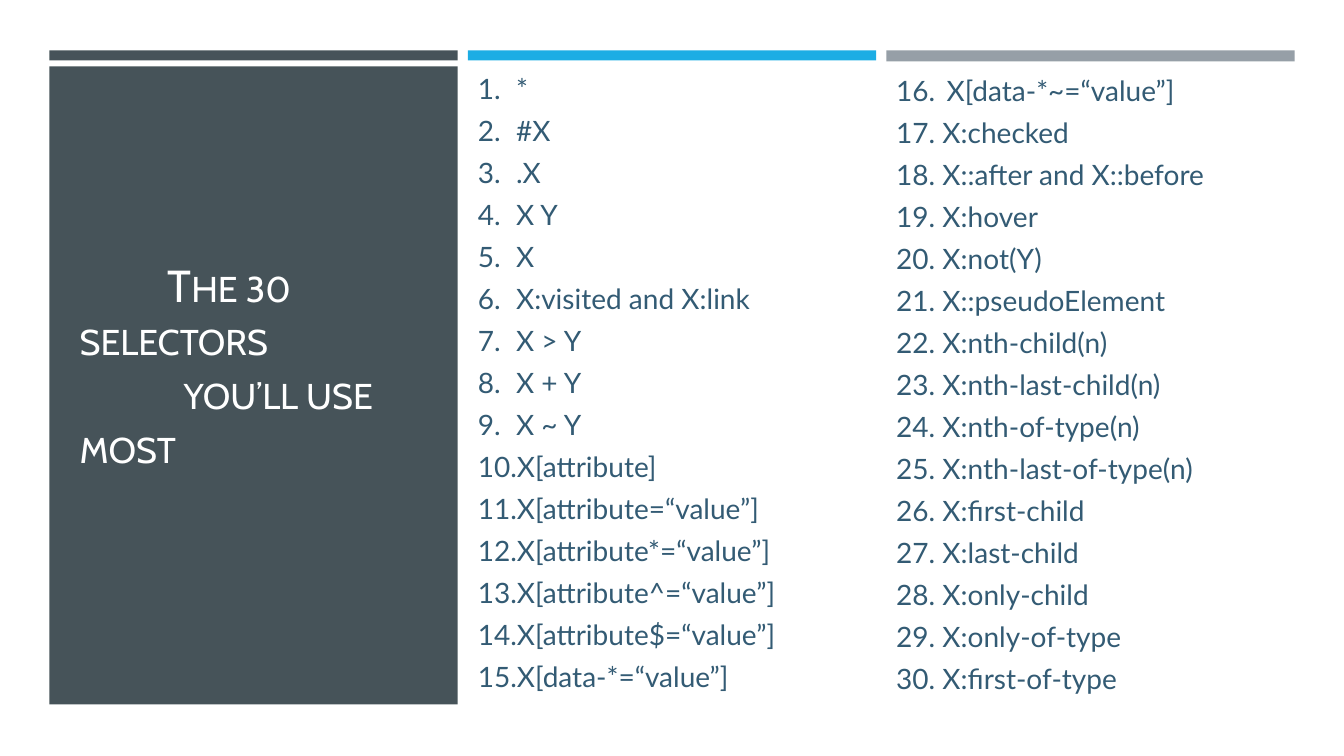
from dataclasses import dataclass

import lxml.etree
import pptx
import pptx.dml.color
import pptx.enum.shapes
import pptx.enum.text
import pptx.oxml.ns
import pptx.util
from pptx.util import Inches

COLORS = {
    "navy": "335B74",
    "white": "FFFFFF",
    "slate": "465359",
    "blue": "1CADE4",
    "gray": "969FA7",
}
COLUMN_WIDTH = 4.05
COLUMN_LEFTS = [0.49 + 4.15 * column for column in range(3)]
TITLE_LINES = [("The 30 selectors", 0.87), ("you’ll use most", 1.03)]


@dataclass
class Panel:
    left: float
    top: float
    width: float
    height: float
    color: str


@dataclass
class SelectorList:
    left: float
    top: float
    height: float
    start: int
    first_indent: float
    selectors: list[str]


PANELS = [
    Panel(0, 0, 13.33, 7.5, "white"),
    Panel(COLUMN_LEFTS[0], 0.66, COLUMN_WIDTH, 6.33, "slate"),
    Panel(COLUMN_LEFTS[0], 0.5, COLUMN_WIDTH, 0.1, "slate"),
    Panel(COLUMN_LEFTS[1], 0.5, COLUMN_WIDTH, 0.1, "blue"),
    Panel(COLUMN_LEFTS[2], 0.5, COLUMN_WIDTH, 0.11, "gray"),
]

SELECTOR_LISTS = [
    SelectorList(COLUMN_LEFTS[1], 0.66, 6.71, 1, 0.38, [
        "*", "#X", ".X", "X Y", "X", "X:visited and X:link",
        "X > Y", "X + Y", "X ~ Y", "X[attribute]",
        "X[attribute=“value”]", "X[attribute*=“value”]",
        "X[attribute^=“value”]", "X[attribute$=“value”]",
        "X[data-*=“value”]",
    ]),
    SelectorList(COLUMN_LEFTS[2], 0.68, 6.33, 16, 0.5, [
        "X[data-*~=“value”]", " X:checked", " X::after and X::before",
        " X:hover", " X:not(Y)", " X::pseudoElement", " X:nth-child(n)",
        " X:nth-last-child(n)", " X:nth-of-type(n)",
        " X:nth-last-of-type(n)", " X:first-child", " X:last-child",
        " X:only-child", " X:only-of-type", " X:first-of-type",
    ]),
]


def rgb(name: str) -> pptx.dml.color.RGBColor:
    return pptx.dml.color.RGBColor.from_string(COLORS[name])


def apply_format(target: object, values: dict[str, object]) -> None:
    for name, value in values.items():
        setattr(target, name, value)


def add_run(paragraph, text: str, font: str, size: float, color: str):
    run = paragraph.add_run()
    run.text = text
    apply_format(run.font, {"name": font, "size": pptx.util.Pt(size)})
    run.font.color.rgb = rgb(color)
    return run


def draw_panel(slide, panel: Panel) -> None:
    shape = slide.shapes.add_shape(
        pptx.enum.shapes.MSO_SHAPE.RECTANGLE,
        Inches(panel.left), Inches(panel.top),
        Inches(panel.width), Inches(panel.height),
    )
    shape.shadow.inherit = False
    shape.fill.solid()
    shape.fill.fore_color.rgb = rgb(panel.color)
    shape.line.fill.background()


def number_paragraph(paragraph, start: int, indent: float) -> None:
    """Give the paragraph a hanging indent and an automatic number."""
    properties = paragraph._p.get_or_add_pPr()
    properties.set("marL", str(Inches(indent)))
    properties.set("indent", str(-Inches(indent)))
    numbering = lxml.etree.SubElement(
        properties, pptx.oxml.ns.qn("a:buAutoNum"), type="arabicPeriod"
    )
    if start > 1:
        numbering.set("startAt", str(start))


def draw_selector_list(slide, listing: SelectorList) -> None:
    box = slide.shapes.add_textbox(
        Inches(listing.left), Inches(listing.top),
        Inches(COLUMN_WIDTH), Inches(listing.height),
    )
    frame = box.text_frame
    apply_format(frame, {
        "word_wrap": True,
        "auto_size": pptx.enum.text.MSO_AUTO_SIZE.SHAPE_TO_FIT_TEXT,
    })
    for index, selector in enumerate(listing.selectors):
        paragraph = frame.add_paragraph() if index else frame.paragraphs[0]
        paragraph.space_after = pptx.util.Pt(6)
        indent = 0.38 if index else listing.first_indent
        number_paragraph(paragraph, listing.start, indent)
        add_run(paragraph, selector, "Lato", 20, "navy")


def draw_title(slide) -> None:
    title = slide.shapes.title
    apply_format(title, {
        "left": Inches(0.74), "top": Inches(1.03),
        "width": Inches(3.56), "height": Inches(5.72),
    })
    # The taller bottom margin lifts the text by half a line.
    apply_format(title.text_frame, {
        "word_wrap": True,
        "auto_size": pptx.enum.text.MSO_AUTO_SIZE.NONE,
        "vertical_anchor": pptx.enum.text.MSO_ANCHOR.MIDDLE,
        "margin_left": Inches(0.05), "margin_right": Inches(0.05),
        "margin_top": Inches(0.05), "margin_bottom": Inches(0.59),
    })
    for index, (text, indent) in enumerate(TITLE_LINES):
        frame = title.text_frame
        paragraph = frame.add_paragraph() if index else frame.paragraphs[0]
        paragraph.alignment = pptx.enum.text.PP_ALIGN.LEFT
        paragraph._p.get_or_add_pPr().set("indent", str(Inches(indent)))
        run = add_run(paragraph, text, "Cabin", 32, "white")
        run.font._element.set("cap", "small")
    # The placeholder goes in front of the panels.
    title.element.getparent().append(title.element)


def main() -> None:
    deck = pptx.Presentation()
    apply_format(deck, {
        "slide_width": Inches(13.33), "slide_height": Inches(7.5),
    })
    slide = deck.slides.add_slide(deck.slide_layouts[5])
    slide.background.fill.solid()
    slide.background.fill.fore_color.rgb = rgb("navy")
    for panel in PANELS:
        draw_panel(slide, panel)
    draw_title(slide)
    for listing in SELECTOR_LISTS:
        draw_selector_list(slide, listing)
    deck.save("out.pptx")


if __name__ == "__main__":
    main()
